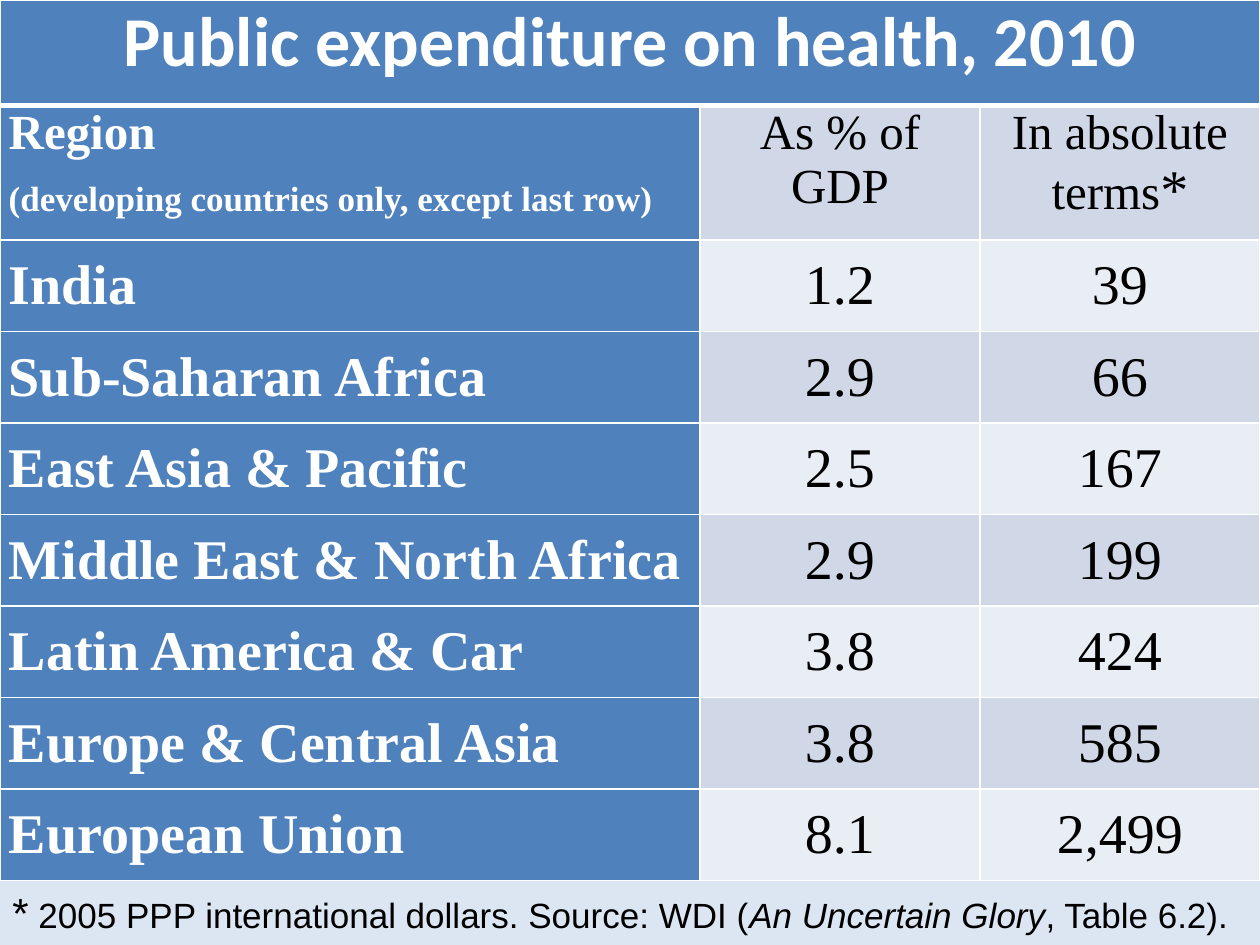
"""Build a slide with a table of public expenditure on health by region."""
import pptx
import pptx.dml.color
import pptx.enum.text
import pptx.oxml
import pptx.oxml.ns
import pptx.util

Pt = pptx.util.Pt
ALIGN = pptx.enum.text.PP_ALIGN
ANCHOR = pptx.enum.text.MSO_ANCHOR

COLORS = {"page": "DCE6F2", "head": "4F81BD", "dark": "D0D8E8",
          "light": "E9EDF4", "white": "FFFFFF", "black": "000000"}
TITLE = "Public expenditure on health, 2010"
HEADERS = [
    [[("Region", 28)], [("(developing countries only, except last row)", 20)]],
    [[("As % of GDP", 28)]],
    [[("In absolute terms", 28), ("*", 32)]],
]
REGIONS = [
    ("India", "1.2", "39"),
    ("Sub-Saharan Africa", "2.9", "66"),
    ("East Asia & Pacific", "2.5", "167"),
    ("Middle East & North Africa", "2.9", "199"),
    ("Latin America & Car", "3.8", "424"),
    ("Europe & Central Asia", "3.8", "585"),
    ("European Union", "8.1", "2,499"),
]
FOOTNOTE = [("*", 24, False),
            (" 2005 PPP international dollars. Source: WDI (", 20, False),
            ("An Uncertain Glory", 20, True),
            (", Table 6.2).", 20, False)]
WIDTHS = [400, 160, 160]
HEIGHTS = [60.2, 77] + [52.3] * len(REGIONS)


def rgb(name):
    return pptx.dml.color.RGBColor.from_string(COLORS[name])


def add_run(p, text, size, font, color, bold=False, italic=False):
    r = p.add_run()
    r.text = text
    r.font.size = Pt(size)
    r.font.name = font
    r.font.bold = bold
    r.font.italic = italic
    r.font.color.rgb = rgb(color)


def style_cell(cell, fill, anchor, widths):
    cell.margin_left = cell.margin_right = Pt(5)
    cell.margin_top = cell.margin_bottom = 0
    cell.vertical_anchor = anchor
    tc_pr = cell._tc.get_or_add_tcPr()
    for side, width in zip("LRTB", widths):
        tc_pr.append(pptx.oxml.parse_xml(
            f'<a:ln{side} {pptx.oxml.ns.nsdecls("a")} w="{Pt(width)}">'
            f'<a:solidFill><a:srgbClr val="{COLORS["white"]}"/></a:solidFill>'
            f'</a:ln{side}>'))
    cell.fill.solid()
    cell.fill.fore_color.rgb = rgb(fill)


def write_cell(cell, paragraphs, font, color, bold, align):
    tf = cell.text_frame
    for i, runs in enumerate(paragraphs):
        p = tf.add_paragraph() if i else tf.paragraphs[0]
        p.alignment = align
        p.space_before = Pt(6 if i else 0)
        p.space_after = Pt(6)
        for text, size in runs:
            add_run(p, text, size, font, color, bold)


def add_health_table(slide):
    rows = [[[[(TITLE, 40)]]], HEADERS]
    rows += [[[[(text, 32)]] for text in region] for region in REGIONS]
    table = slide.shapes.add_table(len(rows), len(WIDTHS), 0, 0,
                                   Pt(sum(WIDTHS)), Pt(sum(HEIGHTS))).table
    for column, width in zip(table.columns, WIDTHS):
        column.width = Pt(width)
    for row, height in zip(table.rows, HEIGHTS):
        row.height = Pt(height)
    table.cell(0, 0).merge(table.cell(0, len(WIDTHS) - 1))
    for i in range(len(rows)):
        borders = (1, 1, 3 if i == 1 else 1, 3 if i == 0 else 1)
        anchor = ANCHOR.TOP if i < 2 else ANCHOR.MIDDLE
        for j in range(len(WIDTHS)):
            head = i == 0 or j == 0
            fill = "head" if head else "dark" if i % 2 else "light"
            style_cell(table.cell(i, j), fill, anchor, borders)
        for j, paragraphs in enumerate(rows[i]):
            head = i == 0 or j == 0
            write_cell(table.cell(i, j), paragraphs,
                       "Calibri" if i == 0 else "Times New Roman",
                       "white" if head else "black", head,
                       ALIGN.LEFT if i and j == 0 else ALIGN.CENTER)


def add_footnote(slide):
    tf = slide.shapes.add_textbox(0, Pt(sum(HEIGHTS)), Pt(720), Pt(36)).text_frame
    tf.word_wrap = True
    tf.auto_size = pptx.enum.text.MSO_AUTO_SIZE.SHAPE_TO_FIT_TEXT
    for text, size, italic in FOOTNOTE:
        add_run(tf.paragraphs[0], text, size, "Arial", "black", italic=italic)


def main():
    prs = pptx.Presentation()
    prs.slide_width, prs.slide_height = Pt(720), Pt(540)
    slide = prs.slides.add_slide(prs.slide_layouts[6])
    slide.background.fill.solid()
    slide.background.fill.fore_color.rgb = rgb("page")
    add_health_table(slide)
    add_footnote(slide)
    prs.save("out.pptx")


if __name__ == "__main__":
    main()
